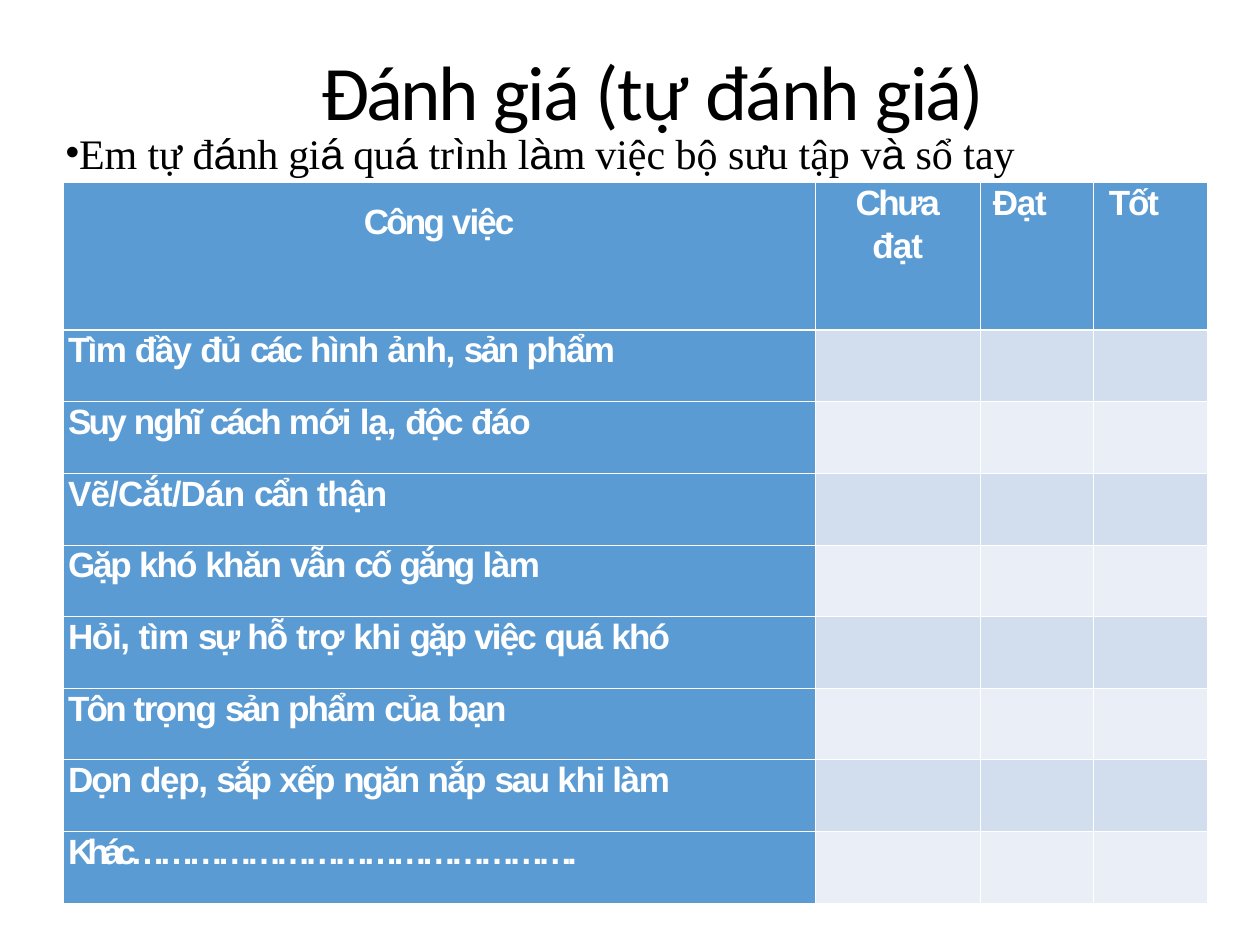
from itertools import groupby
from lxml import etree
from pptx import Presentation
from pptx import util as u
from pptx.dml.color import RGBColor
from pptx.enum import text as t
from pptx.oxml.ns import qn

THEME = {
    "ink": "000000", "paper": "FFFFFF", "label": "5B9BD4",
    "bands": ("D2DEEE", "EAEEF7"),
    "title": 44, "body": 24, "cell": 20,
    "heading_font": "Calibri", "body_font": "Times New Roman", "table_font": "Arial",
}


def write(paragraph, words, *, tracking, size, font, color, bold=False,
          accents="", before=0.0, indent=0.0, align=t.PP_ALIGN.LEFT):
    paragraph.alignment = align
    paragraph.space_before = u.Pt(before)
    props = paragraph._p.get_or_add_pPr()
    props.set("marL", str(u.Inches(indent)))
    props.set("indent", "0")
    parts = words.split(" ")
    for index, (part, spacing) in enumerate(zip(parts, tracking, strict=True)):
        gap = " " if index < len(parts) - 1 else ""
        for accented, letters in groupby(part + gap, lambda letter: letter in accents):
            run = paragraph.add_run()
            run.text = "".join(letters)
            run.font.name = THEME["table_font"] if accented else font
            run.font.size = u.Pt(size)
            run.font.bold = bold
            run.font.color.rgb = RGBColor.from_string(color)
            run._r.get_or_add_rPr().set("spc", str(round(spacing * 100)))


def set_insets(target, top):
    target.margin_left = target.margin_right = target.margin_bottom = 0
    target.margin_top = u.Inches(top)


deck = Presentation()
deck.slide_width, deck.slide_height = u.Inches(10), u.Inches(7.5)
col, row = deck.slide_width / 100, deck.slide_height / 100
slide = deck.slides.add_slide(deck.slide_layouts[1])
heading, prompt = slide.placeholders

for holder, left, top, width, height, anchor in (
    (heading, 16.7, 4.4, 70.1, 10, t.MSO_ANCHOR.MIDDLE),
    (prompt, 5, 13.33, 93.3, 5.6, t.MSO_ANCHOR.TOP),
):
    holder.left, holder.width = int(left * col), int(width * col)
    holder.top, holder.height = int(top * row), int(height * row)
    frame = holder.text_frame
    frame.auto_size = t.MSO_AUTO_SIZE.NONE
    frame.word_wrap = True
    frame.vertical_anchor = anchor
    set_insets(frame, 0.01)

write(heading.text_frame.paragraphs[0], "Đánh giá (tự đánh giá)",
      tracking=(-1.6, -1.3, -0.6, -1, -1.2), size=THEME["title"],
      font=THEME["heading_font"], color=THEME["ink"], before=0.9,
      indent=0.01, align=t.PP_ALIGN.CENTER)

instruction = prompt.text_frame.paragraphs[0]
write(instruction, "Em tự đánh giá quá trình làm việc bộ sưu tập và sổ tay",
      tracking=(-0.1, 0, -0.3, -0.4, -0.4, -0.1, -0.4, 0, 0, 0, 0, -0.6, 0, 0),
      size=THEME["body"], font=THEME["body_font"], color=THEME["ink"],
      accents="áàì", before=1, indent=0.09)
bullet = instruction._p.get_or_add_pPr()
bullet.set("indent", str(u.Inches(-0.07)))
etree.SubElement(bullet, qn("a:buSzPct")).set("val", "93000")
etree.SubElement(bullet, qn("a:buChar")).set("char", "•")
tabs = etree.SubElement(bullet, qn("a:tabLst"))
etree.SubElement(tabs, qn("a:tab"), pos=str(u.Inches(0.09)), algn="l")

headers = (
    ((("Công việc", (-1.6, -1.1), 11.2),), 0.16, 0, t.PP_ALIGN.CENTER),
    ((("Chưa", (-1.4,), 0.5), ("đạt", (-0.5,), 2.5)), 0.01, 0, t.PP_ALIGN.CENTER),
    ((("Đạt", (-0.7,), 0.5),), 0.01, 0.1, t.PP_ALIGN.LEFT),
    ((("Tốt", (-1.2,), 0.5),), 0.01, 0.12, t.PP_ALIGN.LEFT),
)
tasks = (
    ("Tìm đầy đủ các hình ảnh, sản phẩm", (-1, -0.9, -0.8, -1.6, -0.9, -0.8, -1.4, -1)),
    ("Suy nghĩ cách mới lạ, độc đáo", (-1.6, -1.1, -1.5, -0.9, -0.6, -1.2, -0.8)),
    ("Vẽ/Cắt/Dán cẩn thận", (-0.5, -1.4, -0.7)),
    ("Gặp khó khăn vẫn cố gắng làm", (-1.3, -1.1, -1, -1.1, -1.6, -1.5, -0.8)),
    ("Hỏi, tìm sự hỗ trợ khi gặp việc quá khó",
     (-0.8, -0.5, -1.6, -1.1, -0.5, -0.8, -1.4, -1.1, -1, -1.1)),
    ("Tôn trọng sản phẩm của bạn", (-1.6, -0.9, -1.4, -1, -1.3, -1)),
    ("Dọn dẹp, sắp xếp ngăn nắp sau khi làm",
     (-1.1, -0.8, -1.4, -1.2, -1.3, -1, -1.4, -0.8, -0.8)),
    ("Khác……………………………………….", (-3.4,)),
)
label_style = {"size": THEME["cell"], "font": THEME["table_font"],
               "color": THEME["paper"], "bold": True}

column_shares = (59.7, 13.1, 9, 9)
table_height, header_height = 76.27, 15.6
checklist = slide.shapes.add_table(
    len(tasks) + 1, len(headers), int(5 * col), int(19.33 * row),
    int(sum(column_shares) * col), int(table_height * row)).table
checklist.horz_banding = False
for column, share in zip(checklist.columns, column_shares):
    column.width = int(share * col)
for line, band in enumerate(checklist.rows):
    share = (table_height - header_height) / len(tasks) if line else header_height
    band.height = int(share * row)

for column, (lines, inset, indent, align) in enumerate(headers):
    cell = checklist.cell(0, column)
    set_insets(cell, inset)
    for number, (words, tracking, before) in enumerate(lines):
        frame = cell.text_frame
        paragraph = frame.add_paragraph() if number else frame.paragraphs[0]
        write(paragraph, words, tracking=tracking, before=before, indent=indent,
              align=align, **label_style)

for line, (words, tracking) in enumerate(tasks, 1):
    cell = checklist.cell(line, 0)
    set_insets(cell, 0.01)
    write(cell.text_frame.paragraphs[0], words, tracking=tracking, before=1.1,
          indent=0.04, **label_style)

last_line, last_column = len(tasks), len(headers) - 1
for line in range(last_line + 1):
    for column in range(last_column + 1):
        cell = checklist.cell(line, column)
        is_label = line == 0 or column == 0
        cell.fill.solid()
        cell.fill.fore_color.rgb = RGBColor.from_string(
            THEME["label"] if is_label else THEME["bands"][(line - 1) % 2])
        edges = (
            ("a:lnL", 0.25 if column == 0 else 0.5),
            ("a:lnR", 0.25 if column == last_column else 0.5),
            ("a:lnT", 1.5 if line == 1 else 0.5),
            ("a:lnB", 1.5 if line == 0 else 0.25 if line == last_line else 0.5),
        )
        for position, (edge, weight) in enumerate(edges):
            border = etree.Element(qn(edge), w=str(u.Pt(weight)))
            paint = etree.SubElement(border, qn("a:solidFill"))
            etree.SubElement(paint, qn("a:srgbClr")).set("val", THEME["paper"])
            cell._tc.get_or_add_tcPr().insert(position, border)

deck.save("out.pptx")
